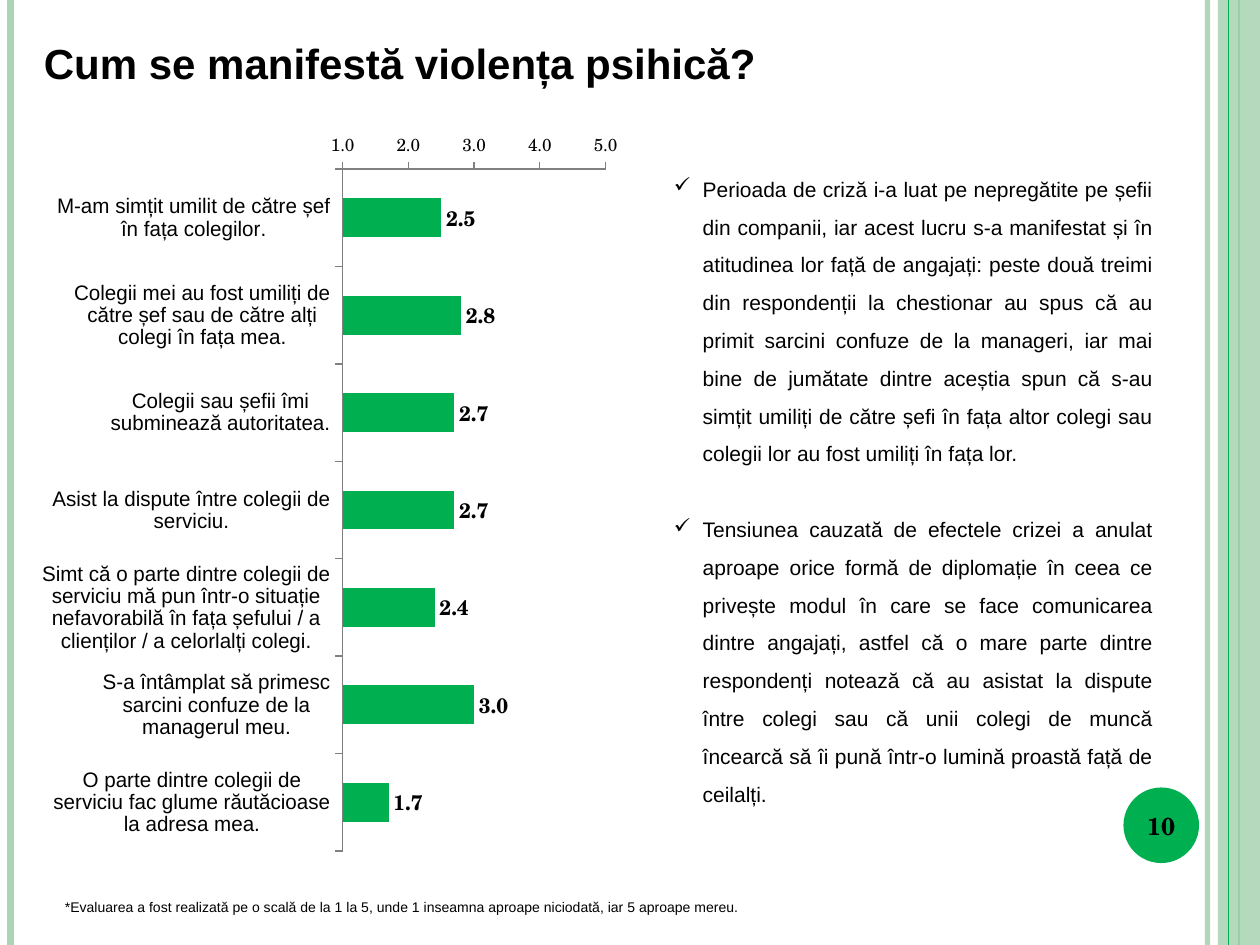
import pptx
import pptx.chart.data
import pptx.dml.color
import pptx.enum.chart
import pptx.enum.shapes
import pptx.enum.text
import pptx.oxml
import pptx.oxml.ns
import pptx.util
from lxml import etree

Pt = pptx.util.Pt
ALIGN = pptx.enum.text.PP_ALIGN
ANCHOR = pptx.enum.text.MSO_ANCHOR
SHAPE = pptx.enum.shapes.MSO_SHAPE

WIDTH, HEIGHT = 720, 540
GREEN, PALE_GREEN, BLACK, GRAY = "00B050", "ABD4B3", "000000", "808080"
SANS, SERIF = "Arial", "TeX Gyre Schola"

TITLE = "Cum se manifestă violența psihică?"
FOOTNOTE = ("*Evaluarea a fost realizată pe o scală de la 1 la 5, unde 1 inseamna "
            "aproape niciodată, iar 5 aproape mereu.")
PAGE_NUMBER = "10"
FINDINGS = [
    "Perioada de criză i-a luat pe nepregătite pe șefii din companii, iar acest lucru s-a "
    "manifestat și în atitudinea lor față de angajați: peste două treimi din respondenții la "
    "chestionar au spus că au primit sarcini confuze de la manageri, iar mai bine de jumătate "
    "dintre aceștia spun că s-au simțit umiliți de către șefi în fața altor colegi sau colegii "
    "lor au fost umiliți în fața lor.",
    "Tensiunea cauzată de efectele crizei a anulat aproape orice formă de diplomație în ceea ce "
    "privește modul în care se face comunicarea dintre angajați, astfel că o mare parte dintre "
    "respondenți notează că au asistat la dispute între colegi sau că unii colegi de muncă "
    "încearcă să îi pună într-o lumină proastă față de ceilalți.",
]
RATINGS = [
    ("M-am simțit umilit de către șef în fața colegilor.", 2.5),
    ("Colegii mei au fost umiliți de către șef sau de către alți colegi în fața mea.", 2.8),
    ("Colegii sau șefii îmi subminează autoritatea.", 2.7),
    ("Asist la dispute între colegii de serviciu.", 2.7),
    ("Simt că o parte dintre colegii de serviciu mă pun într-o situație nefavorabilă în fața "
     "șefului / a clienților / a celorlalți colegi.", 2.4),
    ("S-a întâmplat să primesc sarcini confuze de la managerul meu.", 3.0),
    ("O parte dintre colegii de serviciu fac glume răutăcioase la adresa mea.", 1.7),
]
# x, colour, width, opacity in percent
STRIPES = [(690, PALE_GREEN, 3, 93), (6, PALE_GREEN, 4.5, 100), (708, GREEN, 1.5, 100)]
BAND_STRIPE = (702, GREEN, 0.75, 100)
PLOT_AREA = {"x": 0.475, "y": 0.071, "w": 0.433, "h": 0.902}


def rgb(color):
    return pptx.dml.color.RGBColor.from_string(color)


def set_font(font, name, size, bold=False):
    font.name, font.size, font.bold = name, Pt(size), bold
    font.color.rgb = rgb(BLACK)


def set_opacity(element, percent):
    for color in element.iter(pptx.oxml.ns.qn("a:srgbClr")):
        alpha = etree.SubElement(color, pptx.oxml.ns.qn("a:alpha"))
        alpha.set("val", str(percent * 1000))


def add_stripe(slide, x, color, width, opacity):
    line = slide.shapes.add_connector(
        pptx.enum.shapes.MSO_CONNECTOR.STRAIGHT, Pt(x), Pt(0), Pt(x), Pt(HEIGHT))
    line.line.color.rgb = rgb(color)
    line.line.width = Pt(width)
    properties = line._element.spPr
    if opacity < 100:
        set_opacity(properties, opacity)
    etree.SubElement(properties, pptx.oxml.ns.qn("a:effectLst"))


def add_solid(slide, kind, box, color):
    shape = slide.shapes.add_shape(kind, *map(Pt, box))
    shape.shadow.inherit = False
    shape.fill.solid()
    shape.fill.fore_color.rgb = rgb(color)
    shape.line.fill.background()
    return shape


def add_text(slide, box, text, size, bold=False, wrap=False, anchor=ANCHOR.TOP):
    frame = slide.shapes.add_textbox(*map(Pt, box)).text_frame
    frame.word_wrap = wrap
    frame.vertical_anchor = anchor
    frame.text = text
    for paragraph in frame.paragraphs:
        set_font(paragraph.runs[0].font, SANS, size, bold)
    return frame


def add_check_bullet(paragraph, indent):
    properties = paragraph._p.get_or_add_pPr()
    properties.set("marL", str(Pt(indent)))
    properties.set("indent", str(-Pt(indent)))
    bullet = etree.SubElement(properties, pptx.oxml.ns.qn("a:buChar"))
    bullet.set("char", "✓")


def place_plot_area(chart):
    """Fix the inner plot area as fractions of the chart."""
    plot_area = chart._chartSpace.chart.plotArea
    for layout in plot_area.findall(pptx.oxml.ns.qn("c:layout")):
        plot_area.remove(layout)
    settings = {"layoutTarget": "inner", "xMode": "edge", "yMode": "edge", **PLOT_AREA}
    layout = etree.Element(pptx.oxml.ns.qn("c:layout"))
    manual = etree.SubElement(layout, pptx.oxml.ns.qn("c:manualLayout"))
    for name, value in settings.items():
        etree.SubElement(manual, pptx.oxml.ns.qn("c:" + name)).set("val", str(value))
    plot_area.insert(0, layout)


def add_ratings_chart(slide, box):
    data = pptx.chart.data.CategoryChartData(number_format="0.0")
    data.categories = [label for label, _ in RATINGS]
    data.add_series("Series 1", [value for _, value in RATINGS])
    chart = slide.shapes.add_chart(
        pptx.enum.chart.XL_CHART_TYPE.BAR_CLUSTERED, *map(Pt, box), data).chart
    chart.has_legend = chart.has_title = False
    set_font(chart.font, SERIF, 10)

    for axis in (chart.category_axis, chart.value_axis):
        axis.has_major_gridlines = False
        axis.major_tick_mark = pptx.enum.chart.XL_TICK_MARK.OUTSIDE
        axis.format.line.color.rgb = rgb(GRAY)
    chart.category_axis.reverse_order = True
    set_font(chart.category_axis.tick_labels.font, SANS, 12)
    scale = chart.value_axis
    scale.minimum_scale, scale.maximum_scale, scale.major_unit = 1, 5, 1
    scale.tick_labels.number_format = "0.0"
    scale.tick_labels.number_format_is_linked = False

    plot = chart.plots[0]
    plot.gap_width = 150
    plot.vary_by_categories = False
    fill = plot.series[0].format.fill
    fill.solid()
    fill.fore_color.rgb = rgb(GREEN)
    plot.has_data_labels = True
    labels = plot.data_labels
    labels.show_value = True
    labels.number_format = "0.0"
    labels.number_format_is_linked = False
    labels.position = pptx.enum.chart.XL_LABEL_POSITION.OUTSIDE_END
    set_font(labels.font, SERIF, 12, bold=True)
    place_plot_area(chart)


def main():
    presentation = pptx.Presentation()
    presentation.slide_width, presentation.slide_height = Pt(WIDTH), Pt(HEIGHT)
    slide = presentation.slides.add_slide(presentation.slide_layouts[6])

    for stripe in STRIPES:
        add_stripe(slide, *stripe)
    band = add_solid(slide, SHAPE.RECTANGLE, (696, 0, 24, HEIGHT), PALE_GREEN)
    set_opacity(band._element.spPr, 87)
    add_stripe(slide, *BAND_STRIPE)

    badge = add_solid(slide, SHAPE.OVAL, (642, 450, 43.2, 43.2), GREEN)
    frame = badge.text_frame
    frame.margin_left = frame.margin_right = 0
    frame.vertical_anchor = ANCHOR.MIDDLE
    frame.text = PAGE_NUMBER
    frame.paragraphs[0].alignment = ALIGN.CENTER
    set_font(frame.paragraphs[0].runs[0].font, SERIF, 14, bold=True)

    add_text(slide, (18, 18, 425, 36), TITLE, 24, bold=True, anchor=ANCHOR.MIDDLE)
    findings = add_text(slide, (378, 90, 288, 378), "\n".join(FINDINGS), 12, wrap=True)
    for paragraph in findings.paragraphs:
        paragraph.alignment = ALIGN.JUSTIFY
        paragraph.line_spacing = 1.5
        add_check_bullet(paragraph, 16.5)
    findings.paragraphs[1].space_before = Pt(21.6)

    add_ratings_chart(slide, (24, 66, 354, 432))
    add_text(slide, (30, 510, 402, 17), FOOTNOTE, 8)
    presentation.save("out.pptx")


if __name__ == "__main__":
    main()
